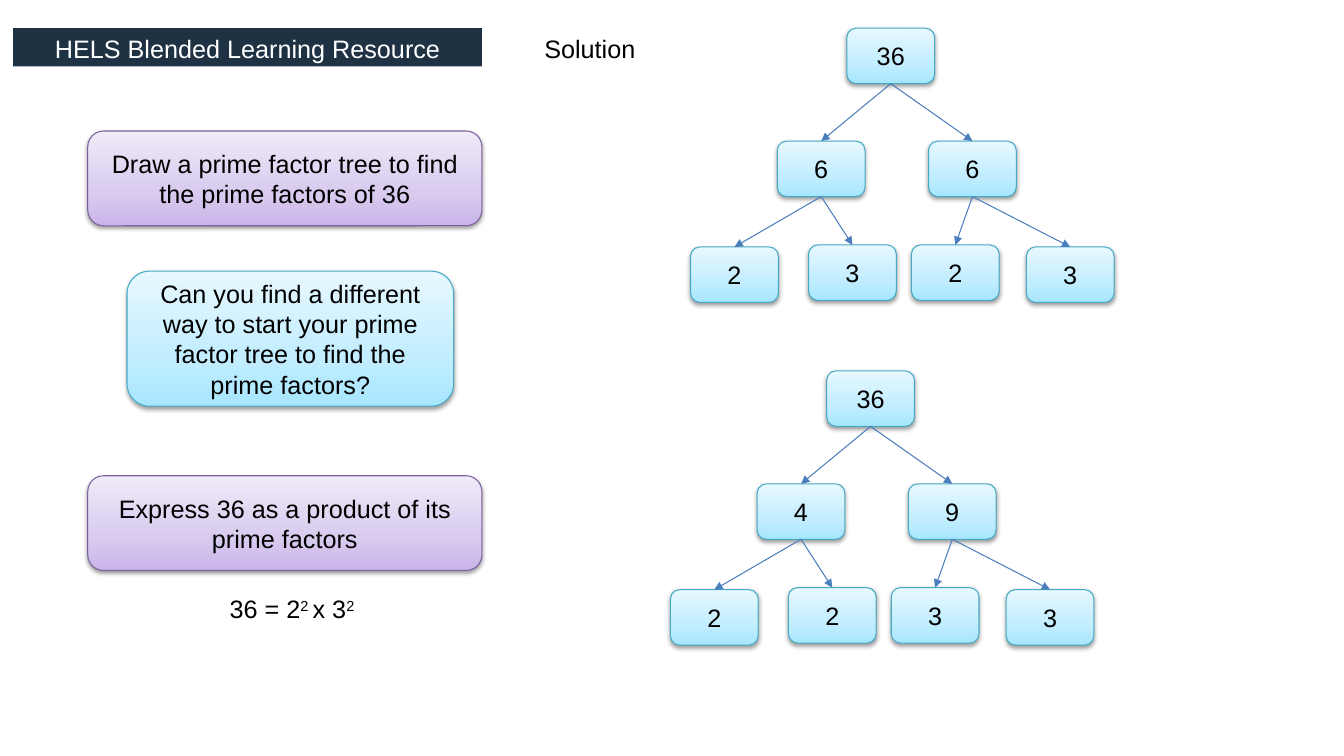
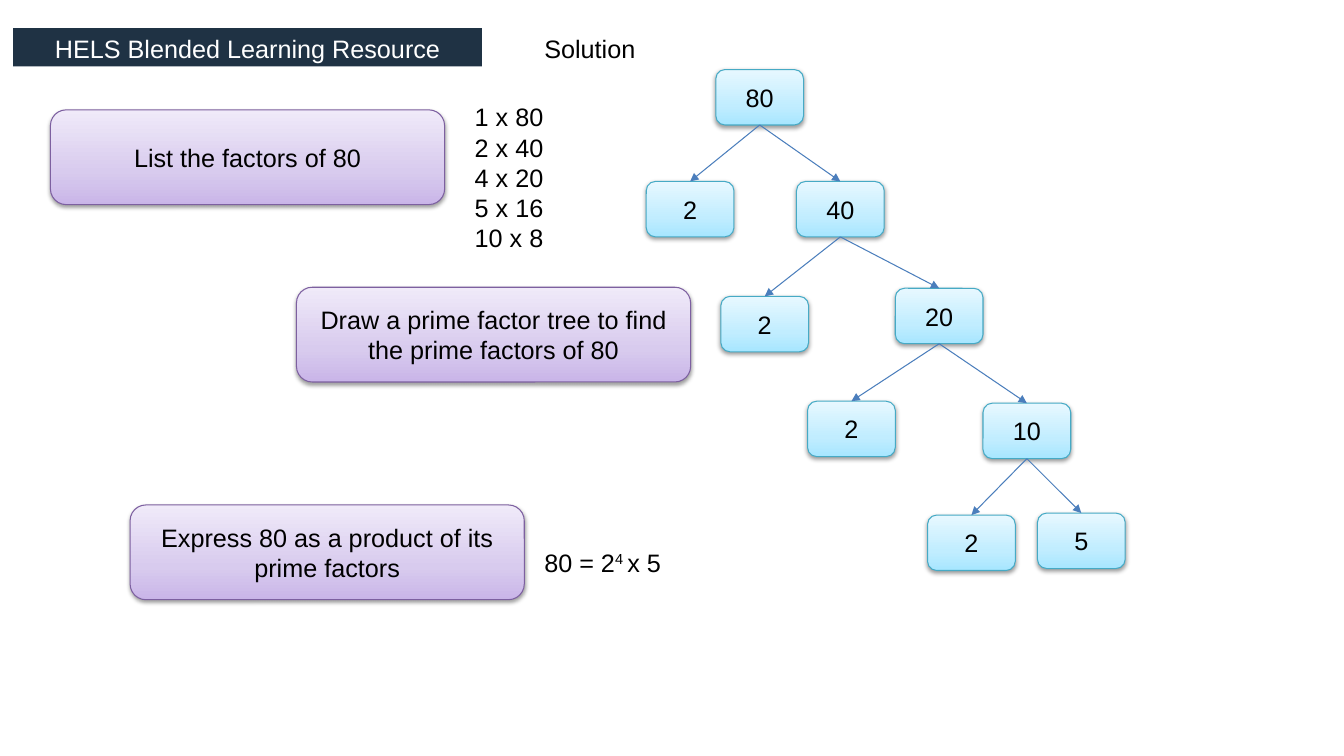
from pptx import Presentation
from pptx.dml.color import RGBColor
from pptx.enum import shapes, text
from pptx.oxml import parse_xml
from pptx.oxml.ns import nsdecls
from pptx.util import Inches, Pt

NAVY = RGBColor(0x1F, 0x32, 0x44)
WHITE = RGBColor(0xFF, 0xFF, 0xFF)
BLACK = RGBColor(0, 0, 0)
PURPLE = RGBColor(0x7D, 0x60, 0xA0)
TEAL = RGBColor(0x46, 0xAA, 0xC5)
BLUE = RGBColor(0x4B, 0x7E, 0xBC)
LILAC_FADE = ("C9B5E8", "D8CBEE", "F0EAF9")
SKY_FADE = ("A7E6FF", "C1EDFF", "E7F8FF")
TASK = (PURPLE, LILAC_FADE)
HINT = (TEAL, SKY_FADE)

FONT = {"name": "Arial", "size": Pt(18)}
PLAIN = {"word_wrap": False, "auto_size": text.MSO_AUTO_SIZE.SHAPE_TO_FIT_TEXT}
FILLED = {"word_wrap": True, "vertical_anchor": text.MSO_ANCHOR.MIDDLE}
BAND = {"word_wrap": True, "vertical_anchor": text.MSO_ANCHOR.TOP}

SHADOW = (
    f'<a:outerShdw {nsdecls("a")} blurRad="40000" dist="20000" dir="5400000"'
    ' rotWithShape="0"><a:srgbClr val="000000"><a:alpha val="38000"/>'
    "</a:srgbClr></a:outerShdw>"
)


def write(shape, words, frame, align, color=BLACK):
    """Fill a shape with lines of text; parts between carets are raised."""
    tf = shape.text_frame
    for key, value in frame.items():
        setattr(tf, key, value)
    for i, line in enumerate(words.split("\n")):
        para = tf.add_paragraph() if i else tf.paragraphs[0]
        para.alignment = align
        for j, part in enumerate(line.split("^")):
            if not part:
                continue
            run = para.add_run()
            run.text = part
            for key, value in FONT.items():
                setattr(run.font, key, value)
            run.font.color.rgb = color
            if j % 2:
                run.font._element.set("baseline", "30000")


def card(slide, words, at, look):
    """Add a rounded box with a gradient and a soft shadow."""
    edge, fade = look
    box = slide.shapes.add_shape(
        shapes.MSO_SHAPE.ROUNDED_RECTANGLE, *map(Inches, at))
    box.line.color.rgb = edge
    box.line.width = Pt(0.75)
    box.shadow.inherit = False
    stops = "".join(
        f'<a:gs pos="{pos}"><a:srgbClr val="{tone}"/></a:gs>'
        for pos, tone in zip((0, 35000, 100000), fade))
    props = box._element.spPr
    props.insert(2, parse_xml(
        f'<a:gradFill {nsdecls("a")} rotWithShape="1"><a:gsLst>{stops}'
        '</a:gsLst><a:lin ang="16200000" scaled="0"/></a:gradFill>'))
    props[-1].append(parse_xml(SHADOW))
    write(box, words, FILLED, text.PP_ALIGN.CENTER)
    return box


# Each node of a tree: left, top, index of its parent
EVEN = [(8.4, 0.28, None), (7.71, 1.4, 0), (9.21, 1.4, 0), (6.85, 2.45, 1),
        (8.02, 2.43, 1), (9.04, 2.43, 2), (10.18, 2.45, 2)]
LOWER = [(x - 0.2, y + 3.4, up) for x, y, up in EVEN]
STEPS = [(7.1, 0.69, None), (6.41, 1.8, 0), (7.9, 1.8, 0), (7.15, 2.94, 2),
         (8.88, 2.86, 2), (8.01, 3.98, 4), (9.75, 4, 4), (9.2, 5.11, 6),
         (10.29, 5.09, 6)]
TASK_SIZE = (3.91, 0.94)
NODE_SIZE = (0.87, 0.55)

PAGES = [
    {
        "cards": [
            ("Draw a prime factor tree to find the prime factors of 36",
             (0.87, 1.3, *TASK_SIZE), TASK),
            ("Can you find a different way to start your prime factor tree "
             "to find the prime factors?", (1.26, 2.69, 3.24, 1.34), HINT),
            ("Express 36 as a product of its prime factors",
             (0.87, 4.72, *TASK_SIZE), TASK),
        ],
        "trees": [(EVEN, (36, 6, 6, 2, 3, 2, 3)),
                  (LOWER, (36, 4, 9, 2, 2, 3, 3))],
        "notes": [("36 = 2^2 ^x 3^2", (2.18, 5.84, 1.48, 0.4))],
    },
    {
        "cards": [
            ("List the factors of 80", (0.5, 1.09, *TASK_SIZE), TASK),
            ("Draw a prime factor tree to find the prime factors of 80",
             (2.94, 2.85, *TASK_SIZE), TASK),
            ("Express 80 as a product of its prime factors",
             (1.29, 5.01, *TASK_SIZE), TASK),
        ],
        "trees": [(STEPS, (80, 2, 40, 2, 20, 2, 10, 2, 5))],
        "notes": [("1 x 80\n2 x 40\n4 x 20\n5 x 16\n10 x 8",
                   (4.61, 0.96, 0.89, 1.62)),
                  ("80 = 2^4 ^x 5", (5.3, 5.38, 1.39, 0.4))],
    },
]

deck = Presentation()
deck.slide_width, deck.slide_height = Inches(13.33), Inches(7.5)

for page in PAGES:
    slide = deck.slides.add_slide(deck.slide_layouts[6])

    band = slide.shapes.add_shape(
        shapes.MSO_SHAPE.RECTANGLE, *map(Inches, (0.13, 0.28, 4.65, 0.38)))
    band.shadow.inherit = False
    band.fill.solid()
    band.fill.fore_color.rgb = NAVY
    band.line.fill.background()
    write(band, "HELS Blended Learning Resource", BAND,
          text.PP_ALIGN.CENTER, WHITE)

    for words, at, look in page["cards"]:
        card(slide, words, at, look)

    for tree, labels in page["trees"]:
        nodes = [card(slide, str(label), (x, y, *NODE_SIZE), HINT)
                 for (x, y, up), label in zip(tree, labels)]
        for node, (x, y, up) in zip(nodes, tree):
            if up is None:
                continue
            link = slide.shapes.add_connector(
                shapes.MSO_CONNECTOR.STRAIGHT, 0, 0, 0, 0)
            link.begin_connect(nodes[up], 2)
            link.end_connect(node, 0)
            link.line.color.rgb = BLUE
            link.line.width = Pt(0.75)
            link.line._get_or_add_ln().append(
                parse_xml(f'<a:tailEnd {nsdecls("a")} type="triangle"/>'))
            link._element.spPr.append(
                parse_xml(f'<a:effectLst {nsdecls("a")}/>'))

    for words, at in [("Solution", (5.3, 0.28, 1.11, 0.4)), *page["notes"]]:
        note = slide.shapes.add_textbox(*map(Inches, at))
        write(note, words, PLAIN, text.PP_ALIGN.LEFT)

deck.save("out.pptx")
